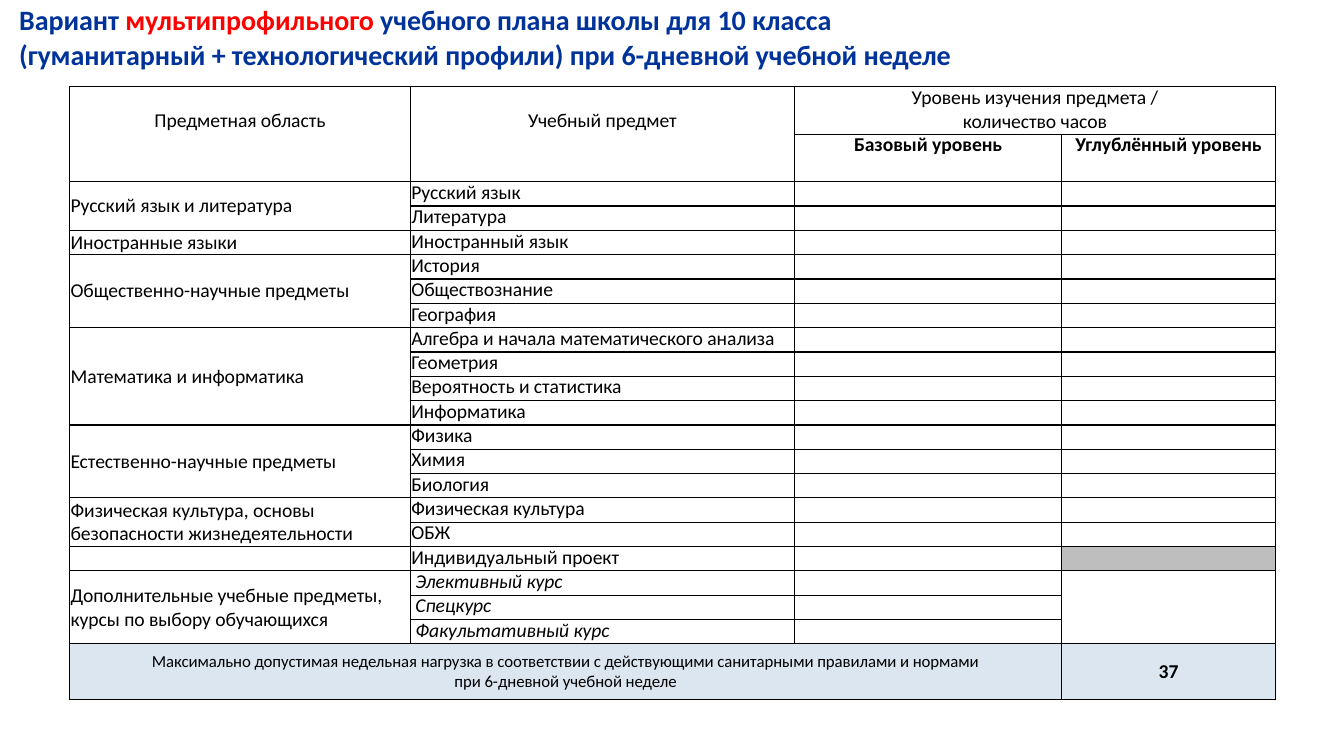
from lxml import etree
from pptx import Presentation
from pptx.dml.color import RGBColor
from pptx.enum.text import MSO_ANCHOR, PP_ALIGN
from pptx.oxml.ns import qn
from pptx.util import Inches, Pt

LEFT, CENTER = PP_ALIGN.LEFT, PP_ALIGN.CENTER
TOP, MIDDLE = MSO_ANCHOR.TOP, MSO_ANCHOR.MIDDLE

NAVY = RGBColor(0x00, 0x33, 0x99)
RED = RGBColor(0xFF, 0x00, 0x00)
BLACK = RGBColor(0x00, 0x00, 0x00)
GRAY = RGBColor(0xBE, 0xBE, 0xBE)
PALE_BLUE = RGBColor(0xDC, 0xE6, 0xF0)

FONT = "Calibri"
COLUMN = Inches(0.1)
ROW = Pt(17.4)
TIGHT = 16.4

TITLE = [
    [("Вариант ", NAVY), ("мультипрофильного ", RED),
     ("учебного плана школы для 10 класса", NAVY)],
    [("(гуманитарный + технологический профили) при 6-дневной учебной неделе", NAVY)],
]
ELECTIVES = "Дополнительные учебные предметы,\nкурсы по выбору обучающихся"
AREAS = [
    ("Русский язык и литература", ["Русский язык", "Литература"]),
    ("Иностранные языки", ["Иностранный язык"]),
    ("Общественно-научные предметы", ["История", "Обществознание", "География"]),
    ("Математика и информатика",
     ["Алгебра и начала математического анализа", "Геометрия",
      "Вероятность и статистика", "Информатика"]),
    ("Естественно-научные предметы", ["Физика", "Химия", "Биология"]),
    ("Физическая культура, основы\nбезопасности жизнедеятельности",
     ["Физическая культура", "ОБЖ"]),
    ("", ["Индивидуальный проект"]),
    (ELECTIVES, ["Элективный курс", "Спецкурс", "Факультативный курс"]),
]
LIMIT = ("Максимально допустимая недельная нагрузка в соответствии с действующими "
         "санитарными правилами и нормами\vпри 6-дневной учебной неделе")


class PlanSlide:
    """Draws styled elements on one slide, measured in grid columns and rows."""

    def __init__(self, deck):
        self.page = deck.slides.add_slide(deck.slide_layouts[6])

    def style(self, span, size, color=BLACK, bold=False, italic=False):
        font = span.font
        font.name, font.size, font.bold, font.italic = FONT, Pt(size), bold, italic
        font.color.rgb = color
        span._r.get_or_add_rPr().set("spc", "-5")

    def title(self, lines, left, top, width, height):
        box = self.page.shapes.add_textbox(
            round(left * COLUMN), round(top * ROW),
            round(width * COLUMN), round(height * ROW))
        frame = box.text_frame
        frame.word_wrap = True
        frame.margin_left = frame.margin_right = frame.margin_bottom = 0
        frame.margin_top = Inches(0.01)
        frame.text = "\n".join("" for line in lines)
        for para, line in zip(frame.paragraphs, lines):
            para.space_before = Pt(1)
            for text, color in line:
                span = para.add_run()
                span.text = text
                self.style(span, 20, color, bold=True)

    def table(self, left, top, widths, heights):
        frame = self.page.shapes.add_table(
            len(heights), len(widths), round(left * COLUMN), round(top * ROW),
            round(sum(widths) * COLUMN), round(sum(heights) * ROW))
        table = frame.table
        table.first_row = table.horz_banding = False
        for column, width in zip(table.columns, widths):
            column.width = round(width * COLUMN)
        for row, height in zip(table.rows, heights):
            row.height = round(height * ROW)
        for cell in table.iter_cells():
            self.blank_cell(cell)
        return table

    def blank_cell(self, cell):
        cell.margin_left = cell.margin_right = cell.margin_top = cell.margin_bottom = 0
        properties = cell._tc.get_or_add_tcPr()
        for side in ("a:lnL", "a:lnR", "a:lnT", "a:lnB"):
            line = etree.SubElement(properties, qn(side), w=str(Pt(1)))
            solid = etree.SubElement(line, qn("a:solidFill"))
            etree.SubElement(solid, qn("a:srgbClr"), val=str(BLACK))
        cell.fill.background()
        para = cell.text_frame.paragraphs[0]
        etree.SubElement(para._p, qn("a:endParaRPr"), sz="1200")

    def label(self, cell, text, align=LEFT, anchor=MIDDLE, indent=0.0, drop=0.0,
              spacing=None, size=14, bold=False, italic=False):
        cell.vertical_anchor = anchor
        cell.margin_left, cell.margin_top = Inches(indent), Inches(drop)
        cell.text_frame.text = text
        for para in cell.text_frame.paragraphs:
            para.alignment = align
            if spacing:
                para.line_spacing = Pt(spacing)
            for span in para.runs:
                self.style(span, size, bold=bold, italic=italic)

    def shade(self, cell, color):
        cell.fill.solid()
        cell.fill.fore_color.rgb = color


def fill_header(slide, table):
    for column, text in enumerate(["Предметная область", "Учебный предмет"]):
        table.cell(0, column).merge(table.cell(1, column))
        slide.label(table.cell(0, column), text, CENTER, TOP, drop=0.22)
    table.cell(0, 2).merge(table.cell(0, 3))
    slide.label(table.cell(0, 2), "Уровень изучения предмета /\nколичество часов",
                CENTER, TOP, spacing=16.6)
    for column, text in enumerate(["Базовый уровень", "Углублённый уровень"], 2):
        slide.label(table.cell(1, column), text, CENTER, TOP, spacing=TIGHT, bold=True)


def fill_areas(slide, table):
    row = 2
    for area, subjects in AREAS:
        last = row + len(subjects) - 1
        elective = area == ELECTIVES
        if last > row:
            table.cell(row, 0).merge(table.cell(last, 0))
        if elective:
            table.cell(row, 3).merge(table.cell(last, 3))
        if area:
            slide.label(table.cell(row, 0), area, indent=0.01)
        else:
            slide.shade(table.cell(row, 3), GRAY)
        for offset, subject in enumerate(subjects):
            slide.label(table.cell(row + offset, 1), subject, anchor=TOP,
                        indent=0.05 if elective else 0.01,
                        spacing=TIGHT, italic=elective)
        row = last + 1
    return row


def fill_limit(slide, table, row):
    table.cell(row, 0).merge(table.cell(row, 2))
    slide.label(table.cell(row, 0), LIMIT, CENTER, size=12)
    slide.label(table.cell(row, 3), "37", CENTER, bold=True)
    for column in (0, 3):
        slide.shade(table.cell(row, column), PALE_BLUE)


def main():
    deck = Presentation()
    deck.slide_width, deck.slide_height = Inches(13.33), Inches(7.5)
    slide = PlanSlide(deck)
    slide.title(TITLE, left=1.9, top=0.08, width=131.4, height=2.9)
    subject_count = sum(len(subjects) for area, subjects in AREAS)
    table = slide.table(left=6.9, top=3.56, widths=[33.8, 38.1, 26.5, 21.2],
                        heights=[1.95, 1.95] + [1] * subject_count + [2.3])
    fill_header(slide, table)
    limit_row = fill_areas(slide, table)
    fill_limit(slide, table, limit_row)
    deck.save("out.pptx")


if __name__ == "__main__":
    main()
